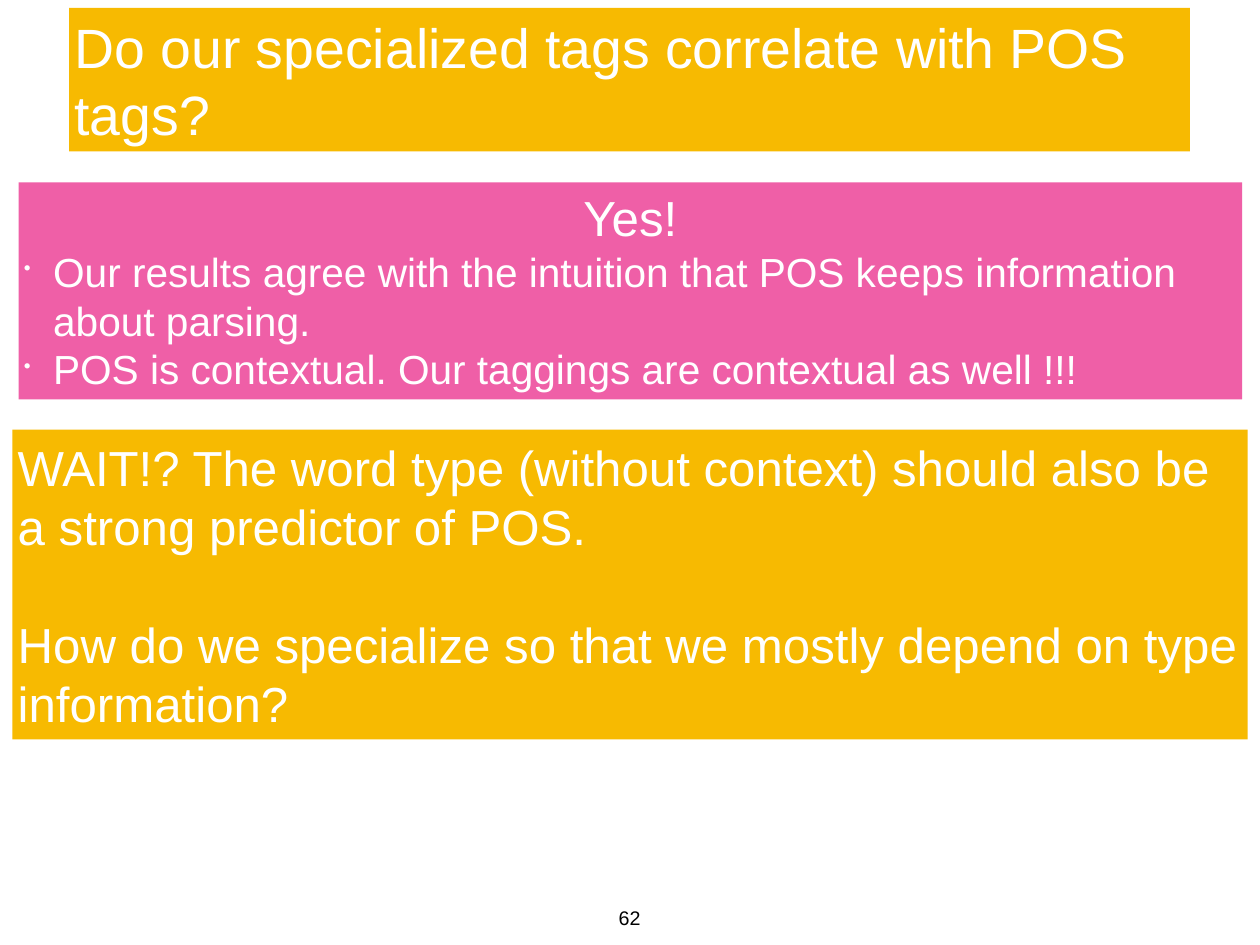
from pptx import Presentation
from pptx.dml.color import RGBColor
from pptx.enum.shapes import MSO_SHAPE
from pptx.enum.text import MSO_ANCHOR, MSO_AUTO_SIZE, PP_ALIGN
from pptx.oxml.xmlchemy import OxmlElement
from pptx.util import Pt

PX = 9144  # 100 px to the inch
RECTANGLE = MSO_SHAPE.RECTANGLE
TOP, MIDDLE = MSO_ANCHOR.TOP, MSO_ANCHOR.MIDDLE
LEFT, CENTER = PP_ALIGN.LEFT, PP_ALIGN.CENTER
GROW = MSO_AUTO_SIZE.SHAPE_TO_FIT_TEXT

AMBER = RGBColor(0xF7, 0xBA, 0x01)
PINK = RGBColor(0xEF, 0x5F, 0xA7)
WHITE = RGBColor(0xFF, 0xFF, 0xFF)
BLACK = RGBColor(0x00, 0x00, 0x00)

INSET = 6
BULLET_INDENT = 33


def add_bullet(paragraph):
    properties = paragraph._p.get_or_add_pPr()
    properties.set("marL", str(BULLET_INDENT * PX))
    properties.set("indent", str(-BULLET_INDENT * PX))
    for tag, key, value in (("a:buSzPct", "val", "50000"),
                            ("a:buChar", "char", "•")):
        element = OxmlElement(tag)
        element.set(key, value)
        properties.append(element)


def write_paragraph(paragraph, text, size, color=WHITE, align=LEFT,
                    bullet=False, gap=0):
    if bullet:
        add_bullet(paragraph)
    paragraph.alignment = align
    if gap:
        paragraph.space_before = Pt(gap)
    run = paragraph.add_run()
    run.text = text
    run.font.name = "Arial"
    run.font.size = Pt(size)
    run.font.color.rgb = color


def fill_text(shape, paragraphs, anchor=TOP, wrap=False):
    frame = shape.text_frame
    settings = {"word_wrap": wrap, "auto_size": GROW, "vertical_anchor": anchor}
    settings.update({f"margin_{side}": INSET * PX
                     for side in ("left", "top", "right", "bottom")})
    for name, value in settings.items():
        setattr(frame, name, value)
    for index, content in enumerate(paragraphs):
        paragraph = frame.add_paragraph() if index else frame.paragraphs[0]
        write_paragraph(paragraph, **content)


def add_panel(slide, box, color, paragraphs, **layout):
    panel = slide.shapes.add_shape(RECTANGLE, *(n * PX for n in box))
    panel.shadow.inherit = False
    panel.fill.solid()
    panel.fill.fore_color.rgb = color
    panel.line.fill.background()
    fill_text(panel, paragraphs, **layout)


def add_label(slide, box, paragraphs):
    label = slide.shapes.add_textbox(*(n * PX for n in box))
    fill_text(label, paragraphs)


def main():
    deck = Presentation()
    deck.slide_width, deck.slide_height = 1422 * PX, 1067 * PX
    slide = deck.slides.add_slide(deck.slide_layouts[6])

    # Question
    add_panel(slide, (78, 9, 1265, 162), AMBER, [
        {"text": "Do our specialized tags correlate with POS tags?", "size": 45},
    ], anchor=MIDDLE)

    # Answer
    add_panel(slide, (21, 206, 1381, 245), PINK, [
        {"text": "Yes!", "size": 40, "align": CENTER},
        {"text": "Our results agree with the intuition that POS keeps "
                 "information about parsing.", "size": 33, "bullet": True},
        {"text": "POS is contextual. Our taggings are contextual as well !!!",
         "size": 33, "bullet": True},
    ])

    # Follow-up question
    add_panel(slide, (14, 485, 1394, 350), AMBER, [
        {"text": "WAIT!? The word type (without context) should also be "
                 "a strong predictor of POS.", "size": 40},
        {"text": "How do we specialize so that we mostly depend on type "
                 "information?", "size": 40, "gap": 48},
    ], anchor=MIDDLE, wrap=True)

    # Page number
    add_label(slide, (692, 1017, 37, 35), [
        {"text": "62", "size": 16, "color": BLACK, "align": CENTER},
    ])

    deck.save("out.pptx")


if __name__ == "__main__":
    main()
